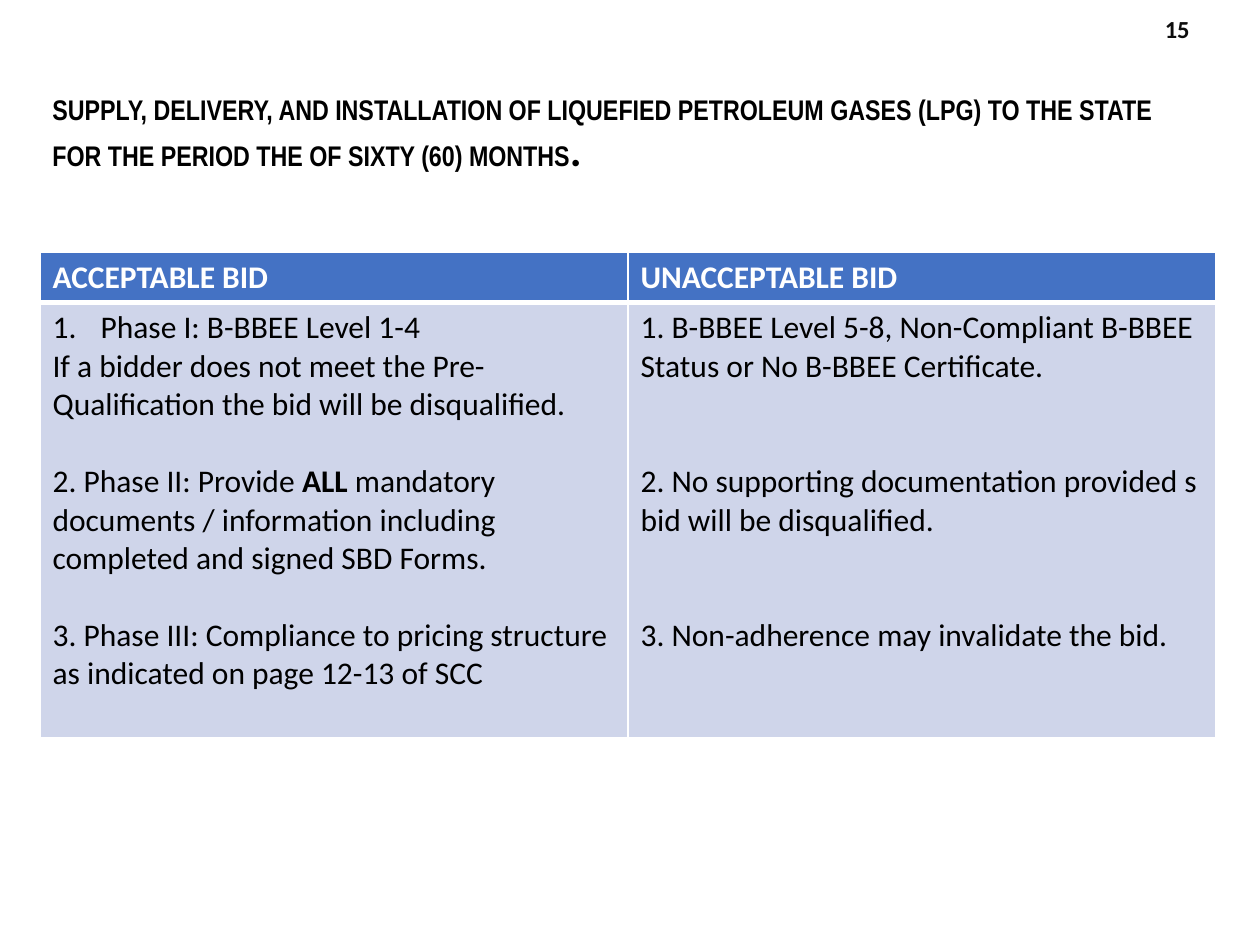
from pptx import Presentation
from pptx.dml.color import RGBColor
from pptx.enum.text import MSO_ANCHOR as Anchor, PP_ALIGN as Align
from pptx.oxml.ns import qn
from pptx.util import Emu, Pt
from lxml.etree import SubElement

SCALE = 914400 / 126
BLACK = RGBColor(0x00, 0x00, 0x00)
NEAR_BLACK = RGBColor(0x0D, 0x0D, 0x0D)
WHITE = RGBColor(0xFF, 0xFF, 0xFF)
BLUE = RGBColor(0x44, 0x72, 0xC4)
PALE_BLUE = RGBColor(0xCF, 0xD5, 0xEA)


def px(n):
    return Emu(round(n * SCALE))


def put_text(paragraph, text, size=18, font="Calibri", color=BLACK, bold=False):
    run = paragraph.add_run()
    run.text = text
    run.font.size = Pt(size)
    run.font.name = font
    run.font.bold = bold
    run.font.color.rgb = color


deck = Presentation()
deck.slide_width, deck.slide_height = px(1260), px(945)
slide = deck.slides.add_slide(deck.slide_layouts[6])

# Page number
page_number = slide.shapes.add_textbox(px(1147), px(0), px(55), px(57)).text_frame
page_number.word_wrap = True
page_number.vertical_anchor = Anchor.MIDDLE
page_number.paragraphs[0].alignment = Align.RIGHT
put_text(page_number.paragraphs[0], "15", size=14, color=NEAR_BLACK, bold=True)

# Title
title = slide.shapes.add_textbox(px(40), px(86), px(1177), px(130)).text_frame
title.word_wrap = True
title.vertical_anchor = Anchor.MIDDLE
title.margin_bottom = px(55)
heading = title.paragraphs[0]
heading.line_spacing = Pt(28)
put_text(heading, "SUPPLY, DELIVERY, AND INSTALLATION OF LIQUEFIED PETROLEUM GASES (LPG) "
         "TO THE STATE FOR THE PERIOD THE OF SIXTY (60) MONTHS",
         size=16.2, font="Arial Narrow", bold=True)
put_text(heading, ".", size=25.2, bold=True)

# Bid table: each paragraph is its space before and its (text, bold) runs
HEADERS = ["ACCEPTABLE BID", "UNACCEPTABLE BID"]
CRITERIA = [
    [
        (0, [("Phase I: B-BBEE Level 1-4", False)]),
        (0, [("If a bidder does not meet the Pre-Qualification the bid will be "
              "disqualified.", False)]),
        (22, [("2. Phase II: Provide ", False), ("ALL", True),
              (" mandatory documents / information including completed and signed "
               "SBD Forms.", False)]),
        (22, [("3. Phase III: Compliance to pricing structure as indicated on page "
               "12-13 of SCC", False)]),
    ],
    [
        (0, [("1. B-BBEE Level 5-8, Non-Compliant B-BBEE Status or No B-BBEE "
              "Certificate.", False)]),
        (44, [("2. No supporting documentation provided s bid will be "
               "disqualified.", False)]),
        (44, [("3. Non-adherence may invalidate the bid.", False)]),
    ],
]
bids = slide.shapes.add_table(2, 2, px(40), px(252), px(1176), px(485)).table
bids.rows[0].height, bids.rows[1].height = px(50), px(435)

# Borders and fills
ROW_STYLES = [(BLUE, {"L": 1, "R": 1, "T": 1, "B": 3}),
              (PALE_BLUE, {"L": 1, "R": 1, "T": 3, "B": 1})]
for row, (fill, borders) in zip(bids.rows, ROW_STYLES):
    for cell in row.cells:
        properties = cell._tc.get_or_add_tcPr()
        for side, width in borders.items():
            line = SubElement(properties, qn(f"a:ln{side}"), w=str(Pt(width)))
            SubElement(SubElement(line, qn("a:solidFill")), qn("a:srgbClr"), val=str(WHITE))
        cell.fill.solid()
        cell.fill.fore_color.rgb = fill

# Cell text
for column, (header, criteria) in enumerate(zip(HEADERS, CRITERIA)):
    put_text(bids.cell(0, column).text_frame.paragraphs[0], header, color=WHITE, bold=True)
    body = bids.cell(1, column).text_frame
    for index, (gap, runs) in enumerate(criteria):
        paragraph = body.add_paragraph() if index else body.paragraphs[0]
        if gap:
            paragraph.space_before = Pt(gap)
        for text, bold in runs:
            put_text(paragraph, text, bold=bold)

# Automatic number on the first acceptable criterion
numbering = bids.cell(1, 0).text_frame.paragraphs[0]._p.get_or_add_pPr()
numbering.set("marL", str(px(48)))
numbering.set("indent", str(-px(48)))
SubElement(numbering, qn("a:buFont"), typeface="+mj-lt")
SubElement(numbering, qn("a:buAutoNum"), type="arabicPeriod")

deck.save("out.pptx")
